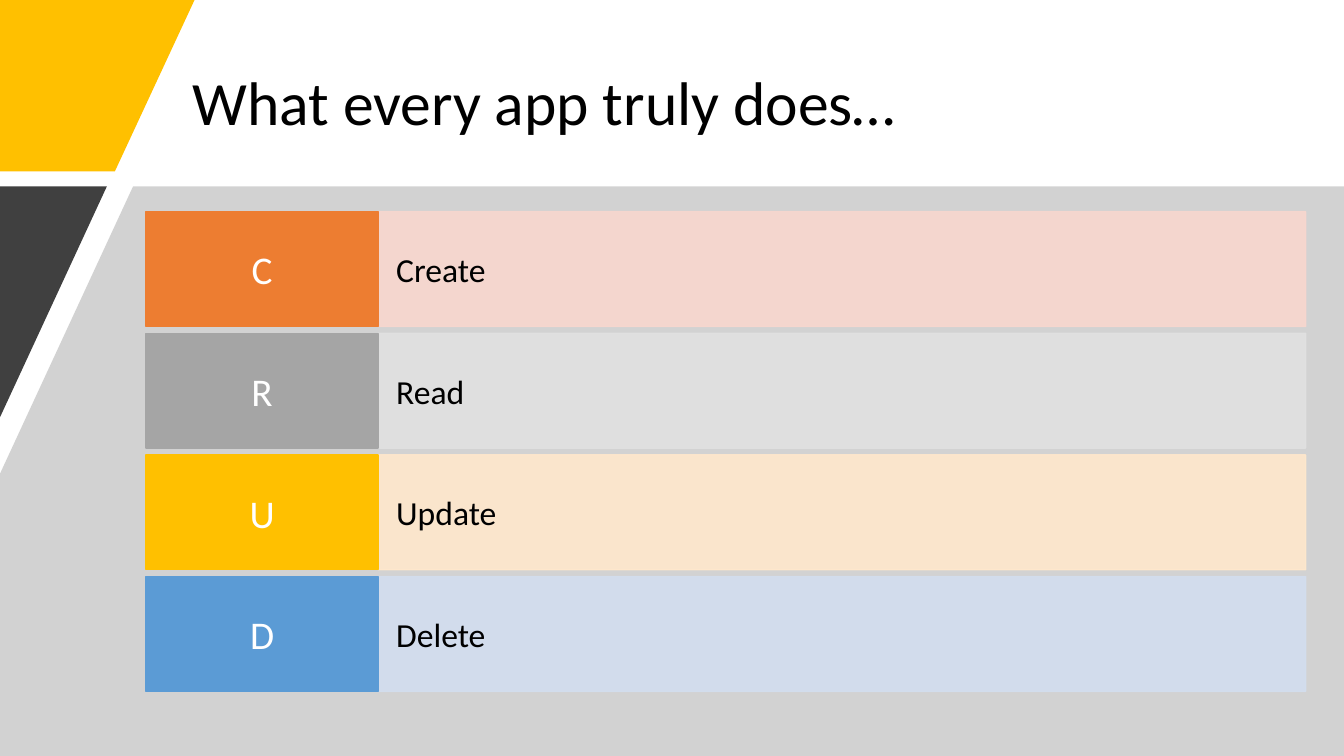
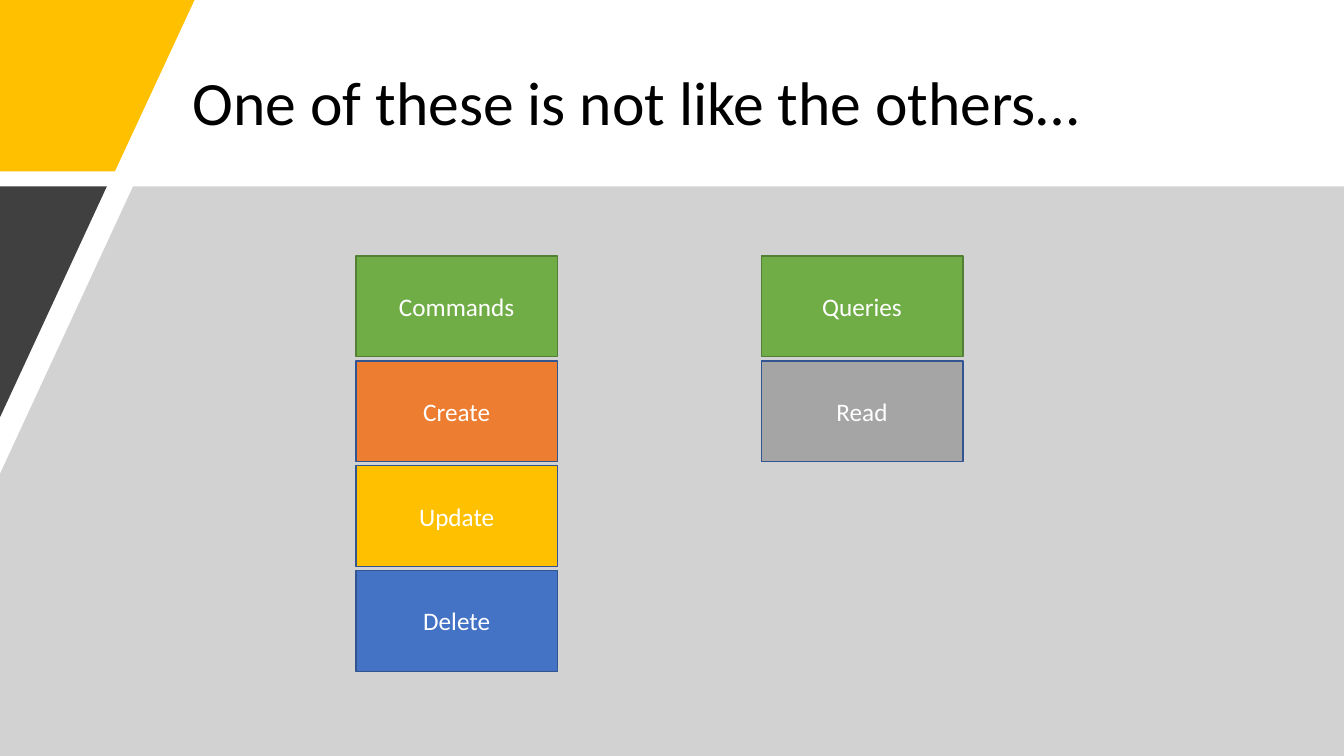
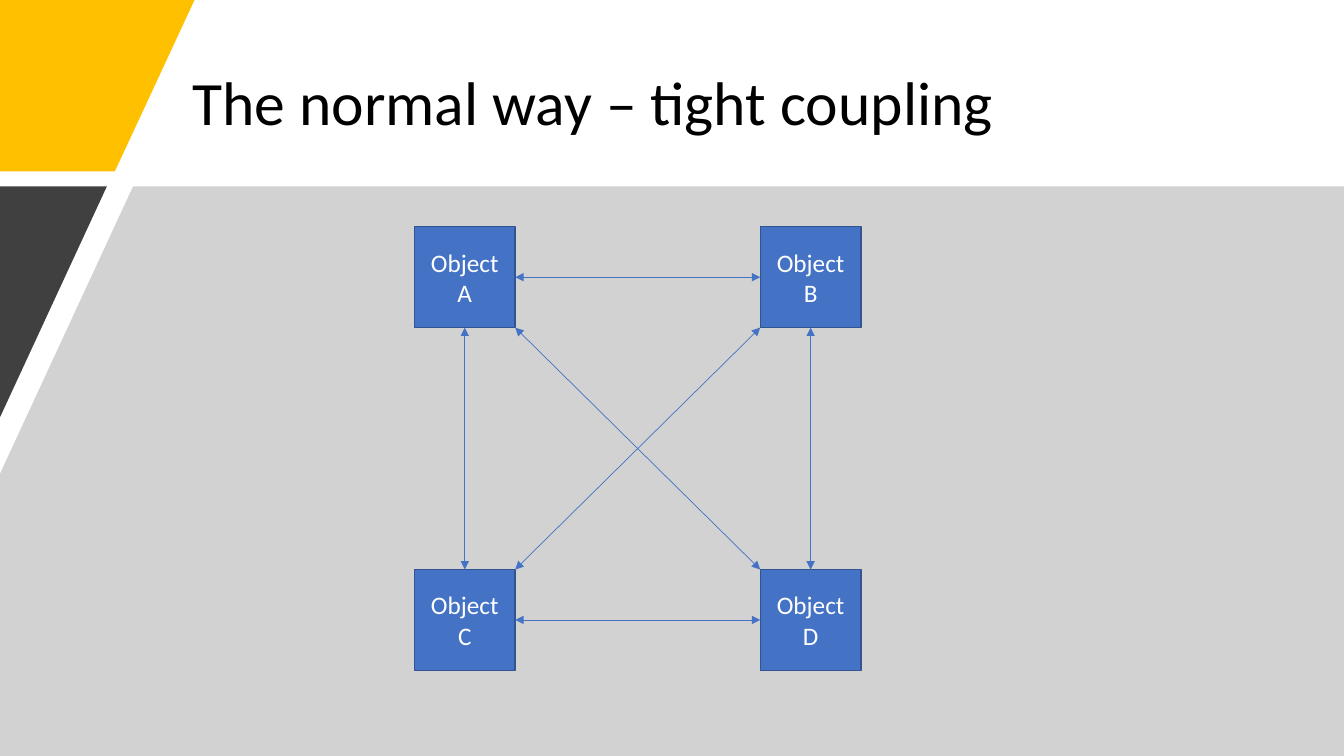
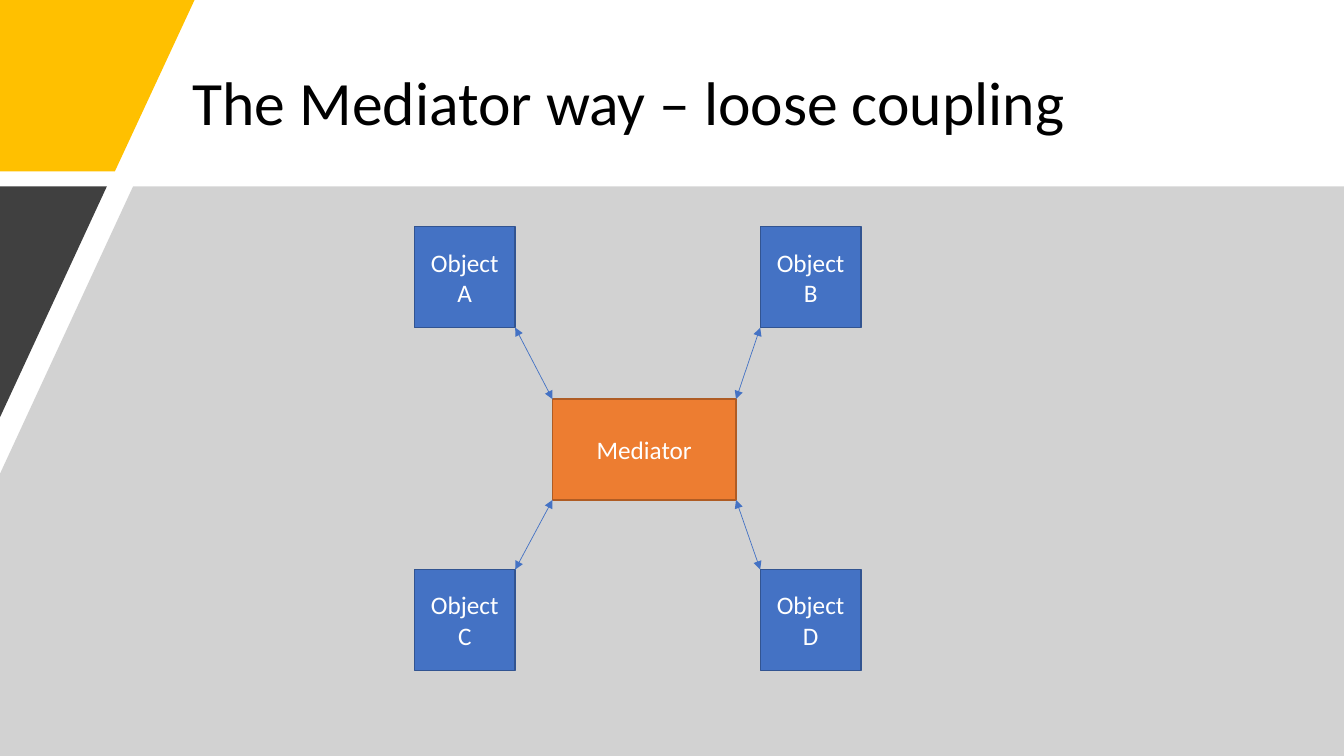
from lxml.etree import SubElement as Sub
from pptx import Presentation
from pptx.dml.color import RGBColor as Rgb
from pptx.enum.shapes import MSO_CONNECTOR as Conn, MSO_SHAPE as Kind
from pptx.enum.text import MSO_ANCHOR as Anchor, MSO_AUTO_SIZE as Fit, PP_ALIGN as Align
from pptx.oxml.ns import qn
from pptx.util import Pt

PX = 9144  # EMU; 100 px to the inch
WIDE, HIGH = 1333, 750
FONT = "Calibri"
INK = {
    "black": "000000", "white": "FFFFFF", "dark": "404040", "band": "A6A6A6",
    "gold": "FFC000", "orange": "ED7D31", "gray": "A5A5A5", "sky": "5B9BD5",
    "blue": "4472C4", "green": "70AD47", "navy": "325491", "moss": "538035",
    "rust": "AF5C24", "peach": "F8D7CE", "silver": "E1E1E1",
    "cream": "FFE8CC", "ice": "D2DEEF",
}
# Place on a box as fractions of its size, and its connection site if it has one
SPOTS = {
    "top": (0.5, 0, 0), "left": (0, 0.5, 1), "bottom": (0.5, 1, 2), "right": (1, 0.5, 3),
    "nw": (0, 0, None), "ne": (1, 0, None), "sw": (0, 1, None), "se": (1, 1, None),
}
OBJECTS = (411, 225, 443, 440)


def px(*sizes):
    return [round(size * PX) for size in sizes]


def rgb(name):
    return Rgb.from_string(INK[name])


def write(para, text, size, ink):
    run = para.add_run()
    run.text = text
    run.font.name, run.font.size = FONT, Pt(size)
    run.font.color.rgb = rgb(ink)


def paint(shape, fill, line=None, alpha=100):
    shape.shadow.inherit = False
    shape.fill.solid()
    shape.fill.fore_color.rgb = rgb(fill)
    if line:
        shape.line.color.rgb = rgb(line)
        shape.line.width = Pt(1)
    else:
        shape.line.fill.background()
    if alpha < 100:
        for tint in shape.element.spPr.iter(qn("a:srgbClr")):
            Sub(tint, qn("a:alpha"), val=str(alpha * 1000))


def block(slide, box, text, fill, line, size=18, ink="white",
          align=Align.CENTER, pad=(10, 5), alpha=100):
    """Add a filled rectangle with one line of text."""
    shape = slide.shapes.add_shape(Kind.RECTANGLE, *px(*box))
    paint(shape, fill, line, alpha)
    frame = shape.text_frame
    frame.word_wrap = True
    frame.vertical_anchor = Anchor.MIDDLE
    frame.margin_left, frame.margin_top = px(*pad)
    frame.margin_right, frame.margin_bottom = px(*pad)
    para = frame.paragraphs[0]
    para.alignment = align
    write(para, text, size, ink)
    return shape


def outline(slide, points, fill, alpha=100):
    path = slide.shapes.build_freeform(*points[0], scale=PX)
    path.add_line_segments(points[1:], close=True)
    paint(path.convert_to_shape(), fill, alpha=alpha)


def link(slide, start, here, end, there):
    """Join two boxes at named spots with a two-headed arrow."""
    ends = []
    for shape, spot in ((start, here), (end, there)):
        across, down, _ = SPOTS[spot]
        ends += [round(shape.left + across * shape.width),
                 round(shape.top + down * shape.height)]
    arrow = slide.shapes.add_connector(Conn.STRAIGHT, *ends)
    for join, shape, spot in ((arrow.begin_connect, start, here),
                              (arrow.end_connect, end, there)):
        site = SPOTS[spot][2]
        if site is not None:
            join(shape, site)
    arrow.line.color.rgb = rgb("blue")
    arrow.line.width = Pt(0.5)
    props = arrow.element.spPr
    for tip in ("a:headEnd", "a:tailEnd"):
        Sub(props.find(qn("a:ln")), qn(tip), type="triangle")
    Sub(props, qn("a:effectLst"))


def start_slide(deck, text):
    """Add a slide with its title, corner and band."""
    slide = deck.slides.add_slide(deck.slide_layouts[5])
    title = slide.shapes.title
    title.left, title.top, title.width, title.height = px(181, 40, 1024, 130)
    frame = title.text_frame
    frame.auto_size = Fit.NONE
    frame.word_wrap = True
    frame.vertical_anchor = Anchor.MIDDLE
    para = frame.paragraphs[0]
    para.alignment, para.line_spacing = Align.LEFT, 0.9
    write(para, text, 44, "black")

    outline(slide, [(0, 0), (193, 0), (114, 170), (0, 170)], "gold")
    outline(slide, [(132, 185), (WIDE, 185), (WIDE, HIGH), (0, HIGH), (0, 470)], "band", 50)
    outline(slide, [(0, 185), (106, 185), (0, 414)], "dark")
    return slide


def rows(slide, box, items, tall=114, head=230):
    """Stack rows of a letter and its word evenly down the box."""
    left, top, wide, high = box
    step = (high - tall) / (len(items) - 1)
    for i, (word, fill, pale) in enumerate(items):
        y = top + i * step
        block(slide, (left + head, y, wide - head, tall), word, pale, pale,
              24, "black", Align.LEFT, (18, 29), 90)
        block(slide, (left, y, head, tall), word[0], fill, fill, 28, pad=(12, 11))


def stack(slide, box, items, gap=4):
    """Stack blocks downwards; the box is that of the first one."""
    left, top, wide, high = box
    for i, (text, fill, line) in enumerate(items):
        block(slide, (left, top + i * (high + gap), wide, high), text, fill, line)


def objects(slide, box, side=100):
    """Put four objects in the corners of the box."""
    left, top, wide, high = box
    return [
        block(slide, (left + i % 2 * (wide - side), top + i // 2 * (high - side), side, side),
              f"Object {name}", "blue", "navy")
        for i, name in enumerate("ABCD")
    ]


def tight(slide, box):
    a, b, c, d = objects(slide, box)
    for ends in ((c, "right", d, "left"), (c, "top", a, "bottom"),
                 (a, "right", b, "left"), (b, "bottom", d, "top"),
                 (a, "se", d, "nw"), (c, "ne", b, "sw")):
        link(slide, *ends)


def loose(slide, box):
    a, b, c, d = objects(slide, box)
    left, top, _, _ = box
    hub = block(slide, (left + 137, top + 171, 182, 100), "Mediator", "orange", "rust")
    for ends in ((a, "se", hub, "nw"), (hub, "ne", b, "sw"),
                 (c, "ne", hub, "sw"), (d, "nw", hub, "se")):
        link(slide, *ends)


def main():
    deck = Presentation()
    deck.slide_width, deck.slide_height = px(WIDE, HIGH)

    slide = start_slide(deck, "What every app truly does…")
    rows(slide, (145, 210, 1150, 476), [
        ("Create", "orange", "peach"), ("Read", "gray", "silver"),
        ("Update", "gold", "cream"), ("Delete", "sky", "ice")])

    slide = start_slide(deck, "One of these is not like the others…")
    stack(slide, (353, 254, 200, 100), [
        ("Commands", "green", "moss"), ("Create", "orange", "navy"),
        ("Update", "gold", "navy"), ("Delete", "blue", "navy")])
    stack(slide, (755, 254, 200, 100), [
        ("Queries", "green", "moss"), ("Read", "gray", "navy")])

    tight(start_slide(deck, "The normal way – tight coupling"), OBJECTS)
    loose(start_slide(deck, "The Mediator way – loose coupling"), OBJECTS)
    deck.save("out.pptx")


if __name__ == "__main__":
    main()
